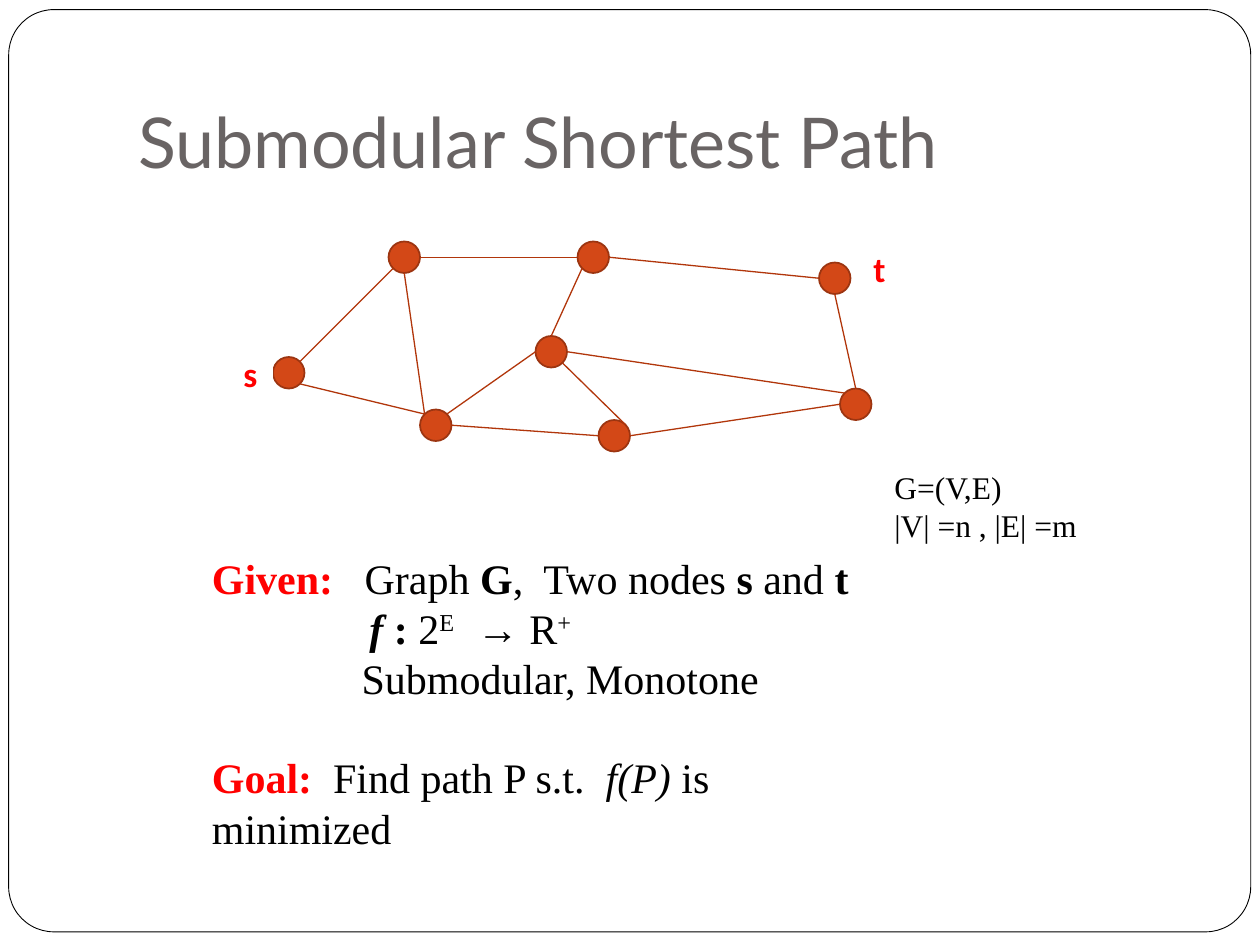
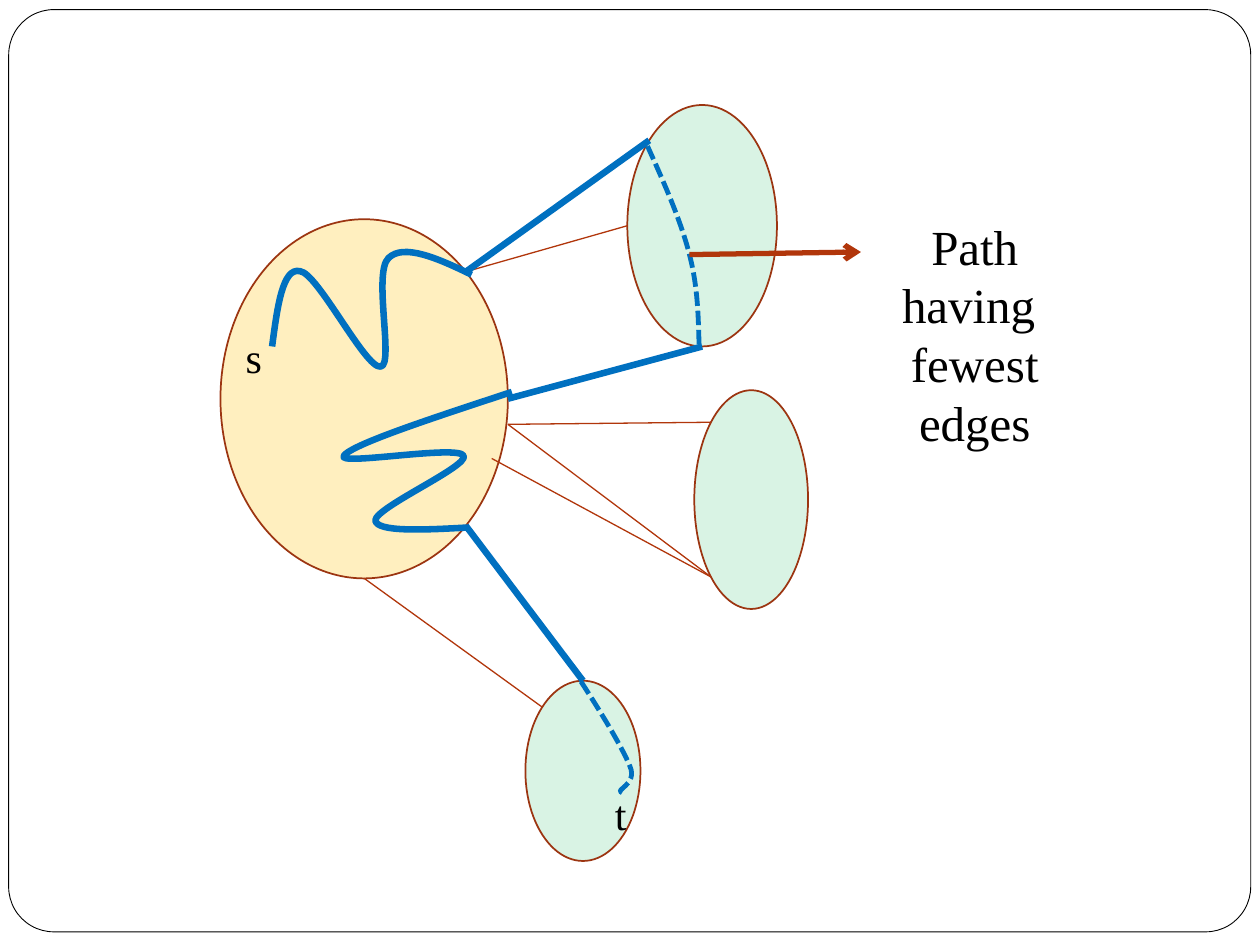
import math

import pptx
import pptx.dml.color
import pptx.enum.dml
import pptx.enum.shapes
import pptx.enum.text
import pptx.oxml
import pptx.oxml.ns
import pptx.util
from lxml import etree

Pt = pptx.util.Pt
RGBColor = pptx.dml.color.RGBColor
MSO_SHAPE = pptx.enum.shapes.MSO_SHAPE
ALIGN = pptx.enum.text.PP_ALIGN
ANCHOR = pptx.enum.text.MSO_ANCHOR
qn = pptx.oxml.ns.qn

WHITE = RGBColor(0xFF, 0xFF, 0xFF)
BLACK = RGBColor(0, 0, 0)
RED = RGBColor(0xFF, 0, 0)
TITLE_GREY = RGBColor(0x69, 0x64, 0x64)
NODE_FILL = RGBColor(0xD3, 0x48, 0x17)
OUTLINE = RGBColor(0x9C, 0x35, 0x11)
EDGE = RGBColor(0xB1, 0x36, 0x0B)
PATH_BLUE = RGBColor(0x00, 0x70, 0xC0)
CORE_YELLOW = RGBColor(0xFF, 0xC0, 0x00)
CLUSTER_GREEN = RGBColor(0x00, 0xB0, 0x50)

SERIF = "Times New Roman"
COMPASS = ["E", "SE", "S", "SW", "W", "NW", "N", "NE"]
NODE_SIZE = 18


def add_run(paragraph, text, size, colour=BLACK, font=SERIF, bold=False,
            italic=False, raised=False):
    run = paragraph.add_run()
    run.text = text
    run.font.name = font
    run.font.size = Pt(size)
    run.font.color.rgb = colour
    run.font.bold = bold
    run.font.italic = italic
    if raised:
        run.font._element.set("baseline", "30000")


def add_text(slide, box, paragraphs, size, align=ALIGN.LEFT, **style):
    """Add a text box; each paragraph is a list of (text, run style) pairs."""
    shape = slide.shapes.add_textbox(*map(Pt, box))
    frame = shape.text_frame
    frame.word_wrap = True
    for index, runs in enumerate(paragraphs):
        paragraph = frame.paragraphs[0] if index == 0 else frame.add_paragraph()
        paragraph.alignment = align
        for text, run_style in runs:
            add_run(paragraph, text, size, **{**style, **run_style})
    return shape


def set_indent(paragraph, margin):
    properties = paragraph._p.get_or_add_pPr()
    properties.set("marL", str(Pt(margin)))
    properties.set("indent", "0")


def set_tab(paragraph, position):
    tabs = etree.SubElement(paragraph._p.get_or_add_pPr(), qn("a:tabLst"))
    etree.SubElement(tabs, qn("a:tab"), pos=str(Pt(position)), algn="l")


def add_outlined(slide, kind, box, fill, line=OUTLINE, width=1, opacity=100):
    shape = slide.shapes.add_shape(kind, *map(Pt, box))
    shape.shadow.inherit = False
    shape.fill.solid()
    shape.fill.fore_color.rgb = fill
    if opacity < 100:
        colour = shape.fill._xPr.find(qn("a:solidFill"))[0]
        etree.SubElement(colour, qn("a:alpha"), val=str(opacity * 1000))
    shape.line.color.rgb = line
    shape.line.width = Pt(width)
    return shape


def rim(box, direction):
    """Point on the ellipse in the box, in a compass direction."""
    left, top, width, height = box
    angle = COMPASS.index(direction) * math.pi / 4
    return (left + width / 2 * (1 + math.cos(angle)),
            top + height / 2 * (1 + math.sin(angle)))


def add_line(slide, start, end, colour=EDGE, width=0.75, arrow=False):
    connector = slide.shapes.add_connector(
        pptx.enum.shapes.MSO_CONNECTOR.STRAIGHT, *map(Pt, (*start, *end)))
    connector.line.color.rgb = colour
    connector.line.width = Pt(width)
    if arrow:
        etree.SubElement(connector.line._get_or_add_ln(), qn("a:tailEnd"), type="arrow")
    etree.SubElement(connector._element.spPr, qn("a:effectLst"))


def bend_segments(shape):
    """Turn every three straight segments of a freeform into one cubic curve."""
    outline = next(shape._element.iter(qn("a:moveTo"))).getparent()
    segments = outline.findall(qn("a:lnTo"))
    for first in range(0, len(segments), 3):
        curve = etree.SubElement(outline, qn("a:cubicBezTo"))
        for segment in segments[first:first + 3]:
            curve.append(segment[0])
            outline.remove(segment)


def add_curve(slide, points, width, dashed=False):
    """Draw a chain of cubic curves: a start, then two controls and an end each."""
    start, *others = [tuple(map(Pt, point)) for point in points]
    builder = slide.shapes.build_freeform(*start)
    builder.add_line_segments(others, close=False)
    shape = builder.convert_to_shape()
    bend_segments(shape)
    shape.shadow.inherit = False
    shape.fill.background()
    shape.line.color.rgb = PATH_BLUE
    shape.line.width = Pt(width)
    if dashed:
        shape.line.dash_style = pptx.enum.dml.MSO_LINE.SQUARE_DOT


def add_framed_slide(presentation):
    slide = presentation.slides.add_slide(presentation.slide_layouts[6])
    frame = add_outlined(slide, MSO_SHAPE.ROUNDED_RECTANGLE,
                         (5, 5.5, 709.75, 527), WHITE, BLACK, 0.5)
    frame.adjustments[0] = 0.049
    return slide


def add_title(slide, box, text):
    frame = add_text(slide, box, [[(text, {})]], 40,
                     font="Lato", colour=TITLE_GREY).text_frame
    frame.vertical_anchor = ANCHOR.BOTTOM
    frame.margin_bottom = Pt(7.2)


def add_graph(slide, left, top):
    offsets = {"upper left": (66, 0), "s": (0, 66), "lower left": (84, 96),
               "upper middle": (174, 0), "lower middle": (186, 102),
               "t": (312, 12), "right": (324, 84), "centre": (150, 54)}
    nodes = {name: (left + x, top + y, NODE_SIZE, NODE_SIZE)
             for name, (x, y) in offsets.items()}
    edges = [("s", "NE", "upper left", "SW"),
             ("upper left", "E", "upper middle", "W"),
             ("s", "SE", "lower left", "NW"),
             ("lower left", "NE", "centre", "W"),
             ("lower left", "E", "lower middle", "W"),
             ("upper middle", "E", "t", "W"),
             ("t", "S", "right", "N"),
             ("lower middle", "E", "right", "W"),
             ("centre", "E", "right", "NW"),
             ("lower middle", "NE", "centre", "SE"),
             ("upper middle", "SW", "centre", "N"),
             ("upper left", "S", "lower left", "NW")]
    for box in nodes.values():
        add_outlined(slide, MSO_SHAPE.OVAL, box, NODE_FILL)
    for start, start_side, end, end_side in edges:
        add_line(slide, rim(nodes[start], start_side), rim(nodes[end], end_side))
    for name, x, y in [("s", -24, 60), ("t", 336, 0)]:
        label = add_text(slide, (left + x, top + y, 24, 31.5), [[(name, {})]], 20,
                         font="Calibri", colour=RED, bold=True)
        label.fill.solid()
        label.fill.fore_color.rgb = WHITE


def add_problem(slide, left, top):
    """Add the given facts, the goal and the graph's notation."""
    bold, italic, raised = {"bold": True}, {"italic": True}, {"raised": True}
    heading = {"bold": True, "colour": RED}
    given = add_text(slide, (left, top, 408, 94.5), [
        [("Given:", heading), ("\tGraph ", {}), ("G", bold), (",  Two nodes ", {}),
         ("s", bold), (" and ", {}), ("t", bold)],
        [("f ", {**bold, **italic}), (": ", bold), ("2", {}), ("E  ", raised),
         (" → R", {}), ("+", raised)],
        [("Submodular, Monotone", {})]], 24).text_frame.paragraphs
    set_tab(given[0], 87.25)
    set_indent(given[1], 90)
    set_indent(given[2], 85.5)
    goal = add_text(slide, (left, top + 114, 402, 36), [
        [("Goal:", heading), ("\tFind path P s.t.  ", {}), ("f(P) ", italic),
         ("is minimized", {})]], 24)
    set_tab(goal.text_frame.paragraphs[0], 69.25)
    add_text(slide, (left + 390, top - 48, 144, 51),
             [[("G=(V,E)", {})], [("|V| =n , |E| =m", {})]], 18)


def add_cluster_scene(slide, left, top):
    """Add the core, its three clusters and the path from s to t."""
    def place(x, y, *size):
        return (left + x, top + y, *size)

    core = place(0, 65.25, 164.25, 205.25)
    upper = place(232.5, 0, 85.5, 138)
    middle = place(270.75, 163, 65, 125)
    lower = place(174.25, 329, 65.75, 103)
    add_outlined(slide, MSO_SHAPE.OVAL, core, CORE_YELLOW, opacity=25)
    for cluster in (upper, middle, lower):
        add_outlined(slide, MSO_SHAPE.OVAL, cluster, CLUSTER_GREEN, opacity=15)
    for name, x, y in [("s", 7.25, 125.75), ("t", 218.25, 387)]:
        add_text(slide, place(x, y, 29, 36), [[(name, {})]], 24)

    core_right = place(164.25, 182.5)
    for start, end in [(rim(core, "NE"), rim(upper, "W")),
                       (core_right, rim(middle, "NW")),
                       (core_right, rim(middle, "SW")),
                       (rim(core, "S"), rim(lower, "NW")),
                       (place(155, 202), rim(middle, "SW"))]:
        add_line(slide, start, end)
    for start, end in [(rim(core, "NE"), rim(upper, "NW")),
                       (rim(core, "E"), rim(upper, "S")),
                       (rim(core, "SE"), rim(lower, "N"))]:
        add_line(slide, start, end, PATH_BLUE, 3.75)

    path_from_s = [(29.5, 138), (32.5, 115.5), (35.5, 92.5), (45.5, 95),
                   (55.5, 96), (83, 151), (91.5, 149.5),
                   (99.5, 149), (87, 96), (96, 87.5),
                   (104.5, 79), (124, 87.5), (143.5, 97)]
    path_back = [(166.5, 164), (121, 179), (75, 194), (70.5, 200.5),
                 (66, 206.5), (136, 194), (139, 200.5),
                 (142, 206.5), (88.5, 230), (88.5, 237.5),
                 (89.5, 244), (115, 243), (141, 241.5)]
    path_upper = [(244, 23.5), (253.5, 44.5), (263, 66), (268, 85.5),
                  (273, 105), (273, 122), (273.5, 138.5)]
    path_to_t = [(206, 329.5), (218, 348), (229.5, 367), (234, 378),
                 (238.5, 388.5), (224.5, 391.5), (229.5, 393)]
    for curve in (path_from_s, path_back):
        add_curve(slide, [place(*point) for point in curve], 3.75)
    for curve in (path_upper, path_to_t):
        add_curve(slide, [place(*point) for point in curve], 2.75, dashed=True)

    add_text(slide, place(360, 60, 142, 75),
             [[("Path having ", {})], [("fewest edges", {})]], 28, ALIGN.CENTER)
    add_line(slide, place(268, 85.5), place(366, 84), width=3, arrow=True)


def main():
    presentation = pptx.Presentation()
    presentation.slide_width = Pt(720)
    presentation.slide_height = Pt(540)

    problem_slide = add_framed_slide(presentation)
    add_title(problem_slide, (72, 21.5, 612, 90), "Submodular Shortest Path")
    add_graph(problem_slide, 156, 138)
    add_problem(problem_slide, 114, 312)

    cluster_slide = add_framed_slide(presentation)
    add_cluster_scene(cluster_slide, 126, 60)

    presentation.save("out.pptx")


if __name__ == "__main__":
    main()
